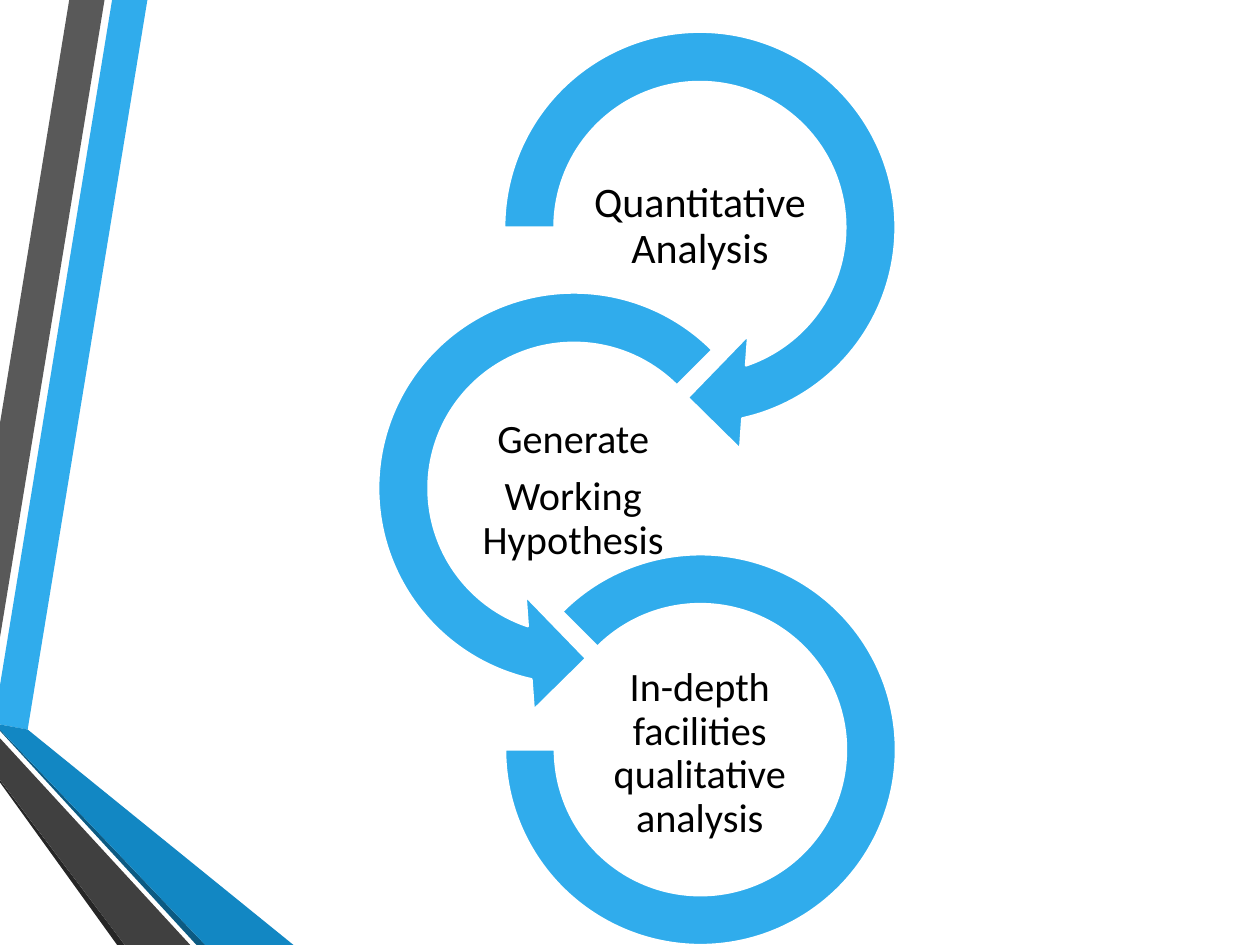
import dataclasses

import pptx
import pptx.dml.color
import pptx.enum.shapes
import pptx.enum.text
import pptx.util

PX = 9144
KIND = pptx.enum.shapes.MSO_SHAPE


@dataclasses.dataclass(frozen=True)
class Theme:
    blue: str = "30ACEC"
    deep: str = "1287C3"
    navy: str = "0C5A82"
    gray: str = "595959"
    dark: str = "404040"
    night: str = "262626"
    white: str = "FFFFFF"
    ink: str = "000000"
    font: str = "Calibri"
    large: int = 24
    small: int = 23
    after: int = 8
    edge: float = 1.25


THEME = Theme()


def tint(code):
    return pptx.dml.color.RGBColor.from_string(code)


def paint(shape, fill):
    shape.shadow.inherit = False
    shape.fill.solid()
    shape.fill.fore_color.rgb = tint(fill)


def draw_bands(slide, box):
    left, top, width, height = box
    bands = [
        (THEME.blue, [(0, 544), (0, 575), (22, 579), (117, 0), (89, 0)]),
        (THEME.gray, [(83, 0), (55, 0), (0, 336), (0, 506)]),
        (THEME.night, [(0, 619), (0, 621), (93, height), (99, height)]),
        (THEME.navy, [(0, 579), (0, 580), (156, height), (width - 70, height)]),
        (THEME.deep, [(0, 579), (width - 70, height), (width, height), (22, 579), (0, 575)]),
        (THEME.dark, [(0, 619), (99, height), (151, height), (0, 586)]),
    ]
    group = slide.shapes.add_group_shape()
    for fill, points in bands:
        pen = group.shapes.build_freeform(*points[0], scale=PX)
        pen.add_line_segments(points[1:], close=True)
        band = pen.convert_to_shape(left * PX, top * PX)
        paint(band, fill)
        band.line.fill.background()


def add_ring(group, kind, box, turns):
    ring = group.shapes.add_shape(kind, *(n * PX for n in box))
    paint(ring, THEME.blue)
    ring.line.color.rgb = tint(THEME.white)
    ring.line.width = pptx.util.Pt(THEME.edge)
    for i, turn in enumerate(turns):
        ring.adjustments[i] = turn


def add_label(group, box, text, size):
    label = group.shapes.add_textbox(*(n * PX for n in box))
    frame = label.text_frame
    frame.word_wrap = True
    frame.vertical_anchor = pptx.enum.text.MSO_ANCHOR.MIDDLE
    frame.margin_left = frame.margin_right = 2 * PX
    frame.margin_top = frame.margin_bottom = 2 * PX
    frame.text = text
    for para in frame.paragraphs:
        para.alignment = pptx.enum.text.PP_ALIGN.CENTER
        para.line_spacing = 0.9
        para.space_after = pptx.util.Pt(THEME.after)
        for run in para.runs:
            run.font.name = THEME.font
            run.font.size = pptx.util.Pt(size)
            run.font.color.rgb = tint(THEME.ink)


def draw_cycle(slide, box):
    left, top, width, height = box
    side, arc = 361, 310
    steps = [
        (KIND.CIRCULAR_ARROW, (100, 0, side, side), (0.11, 11.42, 45, 108, 0.125),
         (180, 130, 201, 100), "Quantitative Analysis", THEME.large),
        (KIND.LEFT_CIRCULAR_ARROW, (0, 207, side, side), (0.11, 11.42, 63, 189, 0.125),
         (59, 314, 242, 151), "Generate\nWorking Hypothesis", THEME.small),
        (KIND.BLOCK_ARC, (126, height - arc, arc, arc), (135, 108, 0.127),
         (180, 521, 201, 155), "In-depth facilities qualitative analysis", THEME.small),
    ]
    group = slide.shapes.add_group_shape()
    for kind, ring, turns, label, text, size in steps:
        add_ring(group, kind, (left + ring[0], top + ring[1], *ring[2:]), turns)
        add_label(group, (left + label[0], top + label[1], *label[2:]), text, size)


def main():
    deck = pptx.Presentation()
    deck.slide_width = 1000 * PX
    deck.slide_height = 750 * PX
    slide = deck.slides.add_slide(deck.slide_layouts[6])
    draw_bands(slide, (0, 0, 233, 750))
    draw_cycle(slide, (275, 0, 461, 750))
    deck.save("out.pptx")


if __name__ == "__main__":
    main()
